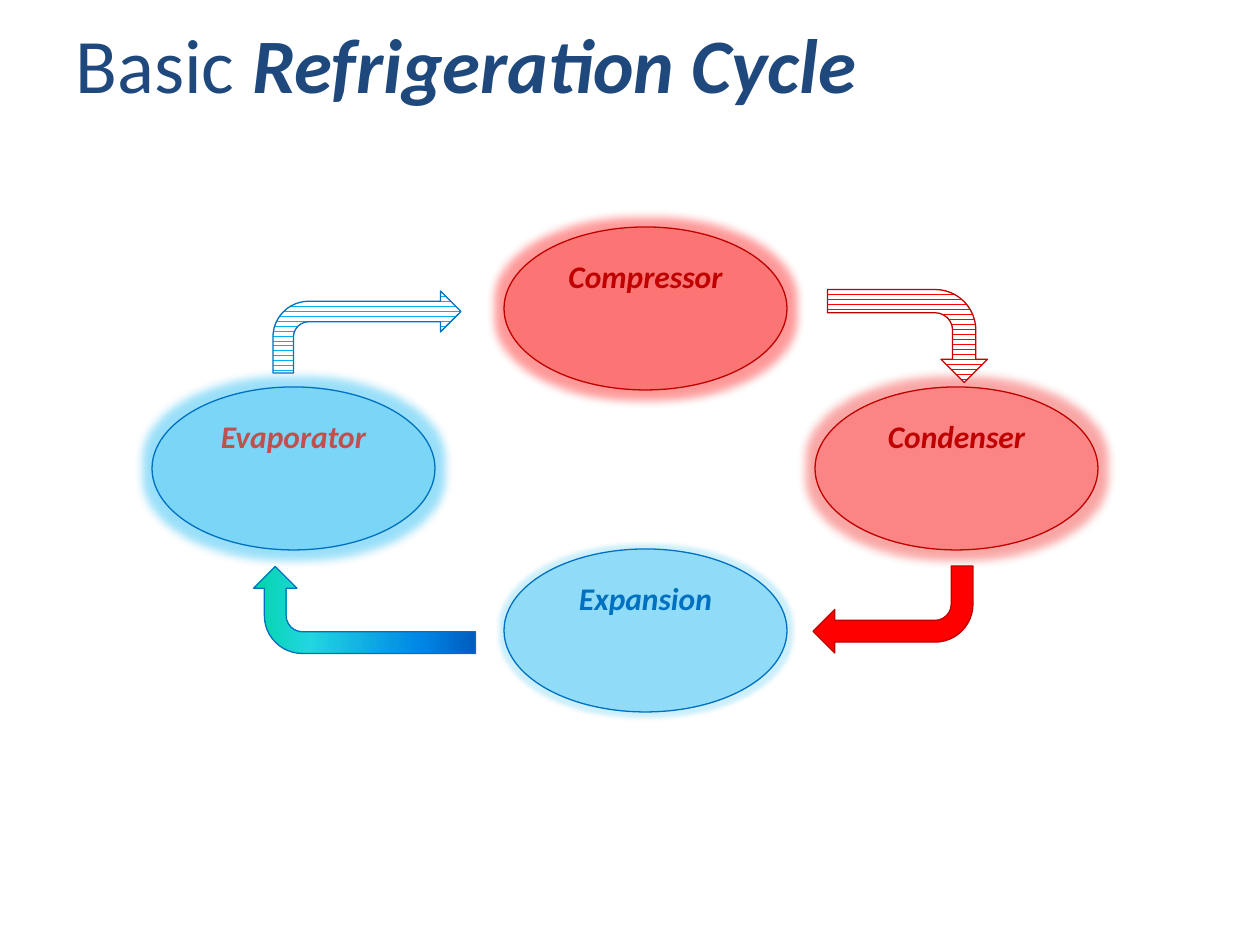
import pptx
import pptx.dml.color
import pptx.enum.dml
import pptx.enum.shapes
import pptx.enum.text
import pptx.oxml
import pptx.oxml.ns
import pptx.util

PX = 914400 // 126
NS = pptx.oxml.ns.nsdecls("a")
SHAPE = pptx.enum.shapes.MSO_SHAPE
RED, DARK_RED, SOFT_RED = "FF0000", "C00000", "F1231F"
SKY, BLUE, NAVY, BRICK = "00B0F0", "0070C0", "1F497D", "C0504D"
STAGE_W, STAGE_H = 283, 163


def rgb(color):
    return pptx.dml.color.RGBColor.from_string(color)


def emu(*lengths):
    return [n * PX for n in lengths]


def add_run(p, text, color, **fmt):
    r = p.add_run()
    r.text = text
    r.font.color.rgb = rgb(color)
    for name, value in {"name": "Calibri", **fmt}.items():
        setattr(r.font, name, value)


def add_title(s):
    tf = s.shapes.add_textbox(*emu(63, 8, 1134, 102)).text_frame
    tf.word_wrap = True
    tf.margin_top = 9 * PX
    p = tf.paragraphs[0]
    size = pptx.util.Pt(44)
    add_run(p, "Basic ", NAVY, size=size)
    add_run(p, "Refrigeration Cycle", NAVY, size=size, bold=True, italic=True)


def add_outlined(s, kind, box, line):
    sp = s.shapes.add_shape(kind, *emu(*box))
    sp.shadow.inherit = False
    sp.line.color.rgb = rgb(line)
    sp.line.width = pptx.util.Pt(0.75)
    return sp


def add_glow(sp, color, radius, alpha):
    effects = sp._element.spPr.find(pptx.oxml.ns.qn("a:effectLst"))
    effects.append(pptx.oxml.parse_xml(
        f'<a:glow {NS} rad="{pptx.util.Pt(radius)}"><a:srgbClr val="{color}">'
        f'<a:alpha val="{alpha * 1000}"/></a:srgbClr></a:glow>'))


def add_stage(s, text, x, y, fill, alpha, line, color, glow):
    """Add a translucent, glowing ellipse; glow is (color, points, percent)."""
    sp = add_outlined(s, SHAPE.OVAL, (x, y, STAGE_W, STAGE_H), line)
    sp.fill.solid()
    sp.fill.fore_color.rgb = rgb(fill)
    clr = sp._element.spPr.find(".//" + pptx.oxml.ns.qn("a:srgbClr"))
    clr.append(pptx.oxml.parse_xml(f'<a:alpha {NS} val="{alpha * 1000}"/>'))
    add_glow(sp, *glow)
    tf = sp.text_frame
    tf.vertical_anchor = pptx.enum.text.MSO_ANCHOR.TOP
    p = tf.paragraphs[0]
    p.alignment = pptx.enum.text.PP_ALIGN.CENTER
    add_run(p, text, color, size=pptx.util.Pt(18), bold=True, italic=True)


def fill_solid(fill, color):
    fill.solid()
    fill.fore_color.rgb = rgb(color)


def fill_wave(fill, color):
    fill.patterned()
    fill.pattern = pptx.enum.dml.MSO_PATTERN.WAVE
    fill.fore_color.rgb = rgb(color)
    fill.back_color.rgb = rgb("FFFFFF")


def fill_gradient(sp, stops):
    """Fill from top to bottom of the unrotated shape."""
    sp.fill.gradient()
    grad = sp._element.spPr.find(pptx.oxml.ns.qn("a:gradFill"))
    marks = "".join(f'<a:gs pos="{pos * 1000}"><a:srgbClr val="{color}"/></a:gs>'
                    for pos, color in stops)
    grad.replace(grad[0], pptx.oxml.parse_xml(f"<a:gsLst {NS}>{marks}</a:gsLst>"))
    grad.find(pptx.oxml.ns.qn("a:lin")).set("ang", "5400000")


def add_arrow(s, box, rotation, line):
    sp = add_outlined(s, SHAPE.BENT_ARROW, box, line)
    sp.rotation = rotation
    return sp


def main():
    prs = pptx.Presentation()
    prs.slide_width, prs.slide_height = pptx.util.Inches(10), pptx.util.Inches(7.5)
    s = prs.slides.add_slide(prs.slide_layouts[6])
    add_title(s)

    for stage in (
        ("Compressor", 504, 227, SOFT_RED, 30, DARK_RED, DARK_RED, (RED, 11, 40)),
        ("Evaporator", 152, 387, SKY, 20, BLUE, BRICK, (SKY, 11, 40)),
        ("Expansion", 504, 549, SKY, 29, BLUE, BLUE, (SKY, 5, 20)),
        ("Condenser", 815, 387, RED, 20, DARK_RED, DARK_RED, (SOFT_RED, 11, 40)),
    ):
        add_stage(s, *stage)

    to_condenser = add_arrow(s, (861, 256, 93, 160), 90, DARK_RED)
    fill_wave(to_condenser.fill, RED)
    to_expansion = add_arrow(s, (813, 566, 160, 87), 180, DARK_RED)
    fill_solid(to_expansion.fill, RED)
    to_evaporator = add_arrow(s, (321, 499, 87, 222), 270, BLUE)
    fill_gradient(to_evaporator, [(0, "03D4A8"), (25, "21D6E0"),
                                  (75, "0087E6"), (100, "005CBF")])
    to_compressor = add_arrow(s, (273, 291, 188, 82), 0, BLUE)
    fill_wave(to_compressor.fill, SKY)

    prs.save("out.pptx")


if __name__ == "__main__":
    main()
